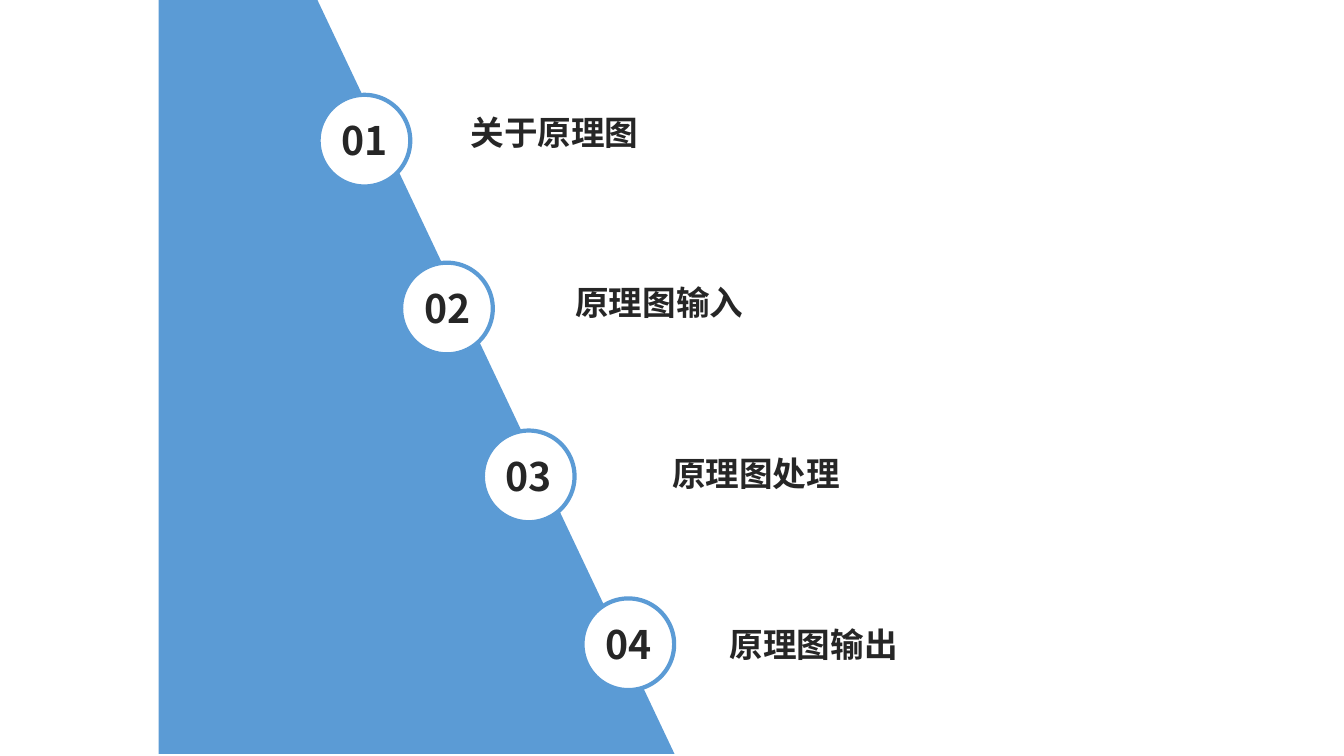
import lxml.etree
import pptx
import pptx.dml.color
import pptx.enum.shapes
import pptx.enum.text
import pptx.oxml.ns
import pptx.util

Cm = pptx.util.Cm
COLOURS = {"blue": "5B9BD5", "white": "FFFFFF", "ink": "262626"}
BAND_OUTLINE = [(16.89, 19.08), (7.98, 0), (4.01, 0), (4.09, 19.18)]
AGENDA = [
    ("关于原理图", 8.03, 11.61, 15.52),
    ("原理图输入", 10.11, 14.25, 13.89),
    ("原理图处理", 12.17, 16.69, 13.87),
    ("原理图输出", 14.68, 18.14, 13.87),
]
BADGE_TOP, BADGE_STEP, BADGE_SIZE = 2.39, 4.23, 2.31
LABEL_TOP, LABEL_STEP = 2.69, 4.3


class AgendaSlide:
    """Draws agenda elements on one slide in a shared style."""

    font_name = "Noto Sans CJK SC"

    def __init__(self, presentation):
        self.slide = presentation.slides.add_slide(presentation.slide_layouts[6])

    def colour(self, name):
        return pptx.dml.color.RGBColor.from_string(COLOURS[name])

    def paint(self, shape, fill):
        shape.shadow.inherit = False
        shape.fill.solid()
        shape.fill.fore_color.rgb = self.colour(fill)

    def band(self, points):
        start, *others = points
        builder = self.slide.shapes.build_freeform(*start, scale=Cm(1))
        builder.add_line_segments(others, close=True)
        shape = builder.convert_to_shape()
        self.paint(shape, "blue")
        shape.line.fill.background()

    def text(self, shapes, text, left, top, width, height, size, alignment):
        shape = shapes.add_textbox(Cm(left), Cm(top), Cm(width), Cm(height))
        text_frame = shape.text_frame
        text_frame.word_wrap = True
        text_frame.auto_size = pptx.enum.text.MSO_AUTO_SIZE.SHAPE_TO_FIT_TEXT
        text_frame.text = text
        paragraph = text_frame.paragraphs[0]
        paragraph.alignment = alignment
        run = paragraph.runs[0]
        run.font.size = pptx.util.Pt(size)
        run.font.bold = True
        run.font.color.rgb = self.colour("ink")
        run.font.name = self.font_name
        properties = run._r.get_or_add_rPr()
        east_asian = lxml.etree.SubElement(properties, pptx.oxml.ns.qn("a:ea"))
        east_asian.set("typeface", self.font_name)

    def badge(self, number, left, top):
        shapes = self.slide.shapes.add_group_shape().shapes
        circle = shapes.add_shape(
            pptx.enum.shapes.MSO_SHAPE.OVAL,
            Cm(left), Cm(top), Cm(BADGE_SIZE), Cm(BADGE_SIZE),
        )
        self.paint(circle, "white")
        circle.line.color.rgb = self.colour("blue")
        circle.line.width = pptx.util.Pt(3)
        self.text(shapes, f"{number:02d}", left + 0.22, top + 0.42, 1.88, 1.52,
                  28, pptx.enum.text.PP_ALIGN.CENTER)

    def label(self, text, left, top, width):
        self.text(self.slide.shapes, text, left, top, width, 1.27,
                  24, pptx.enum.text.PP_ALIGN.LEFT)


def main():
    presentation = pptx.Presentation()
    presentation.slide_width = Cm(33.87)
    presentation.slide_height = Cm(19.05)
    agenda = AgendaSlide(presentation)
    agenda.band(BAND_OUTLINE)
    for index, (title, badge_left, label_left, label_width) in enumerate(AGENDA):
        agenda.badge(index + 1, badge_left, BADGE_TOP + index * BADGE_STEP)
        agenda.label(title, label_left, LABEL_TOP + index * LABEL_STEP, label_width)
    presentation.save("out.pptx")


if __name__ == "__main__":
    main()
